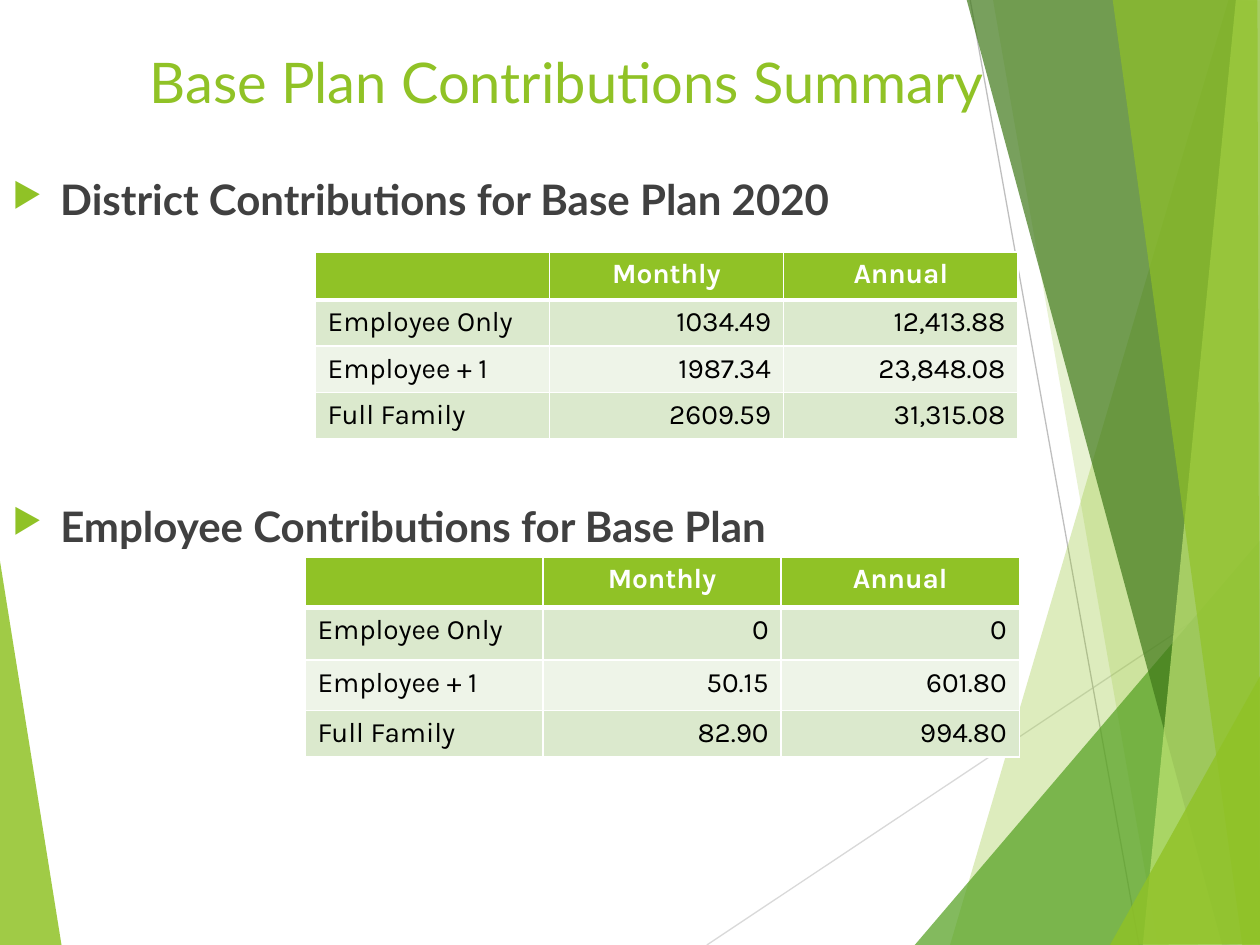
from dataclasses import dataclass

from lxml import etree
from pptx import Presentation
from pptx.dml.color import RGBColor
from pptx.enum.shapes import MSO_CONNECTOR
from pptx.enum.text import MSO_ANCHOR, MSO_AUTO_SIZE, PP_ALIGN
from pptx.oxml.ns import qn
from pptx.util import Inches, Pt

STRAIGHT = MSO_CONNECTOR.STRAIGHT
TOP = MSO_ANCHOR.TOP
NO_AUTOFIT = MSO_AUTO_SIZE.NONE
LEFT, CENTER, RIGHT = PP_ALIGN.LEFT, PP_ALIGN.CENTER, PP_ALIGN.RIGHT

GREEN, WHITE, BLACK, GRAY = "90C226", "FFFFFF", "000000", "404040"
BANDS = ("DBE9CD", "EEF4E8")
HEADER = ("", "Monthly", "Annual")


@dataclass
class Facet:
    color: str
    opacity: int
    points: list


@dataclass
class Ray:
    color: str
    start: tuple
    end: tuple


@dataclass
class Heading:
    text: str
    top: float
    width: float
    height: float


@dataclass
class Contributions:
    left: float
    top: float
    column_width: float
    row_heights: list
    rows: list


# Background parts, from back to front
BACKGROUND = [
    Facet(GREEN, 85, [(-0.01, 4.39), (0.49, 7.51), (-0.01, 7.5)]),
    Ray("D9D9D9", (5.61, 7.5), (10.01, 4.57)),
    Ray("BFBFBF", (7.7, 0), (9.04, 7.5)),
    Facet(GREEN, 30, [(9.75, 0), (7.54, 7.5), (10.02, 7.51), (10.01, 0.01)]),
    Facet(GREEN, 20, [(7.88, -0.01), (9.19, 7.5), (10.01, 7.5), (10.01, -0.01)]),
    Facet("54A021", 72, [(7.26, 7.5), (10, 4.29), (10.01, 7.5)]),
    Facet("3F7819", 70, [(7.67, -0.01), (9.7, 7.5), (10.01, 7.49), (10.01, -0.01)]),
    Facet("C0E474", 70, [(9.81, -0.01), (9.07, 7.5), (10.01, 7.5), (10, -0.01)]),
    Facet(GREEN, 65, [(8.83, -0.01), (9.86, 7.5), (10, 7.5), (9.98, -0.01)]),
    Facet(GREEN, 80, [(8.81, 7.5), (10.01, 5.35), (10.01, 7.49)]),
]

HEADINGS = [
    Heading("District Contributions for Base Plan 2020", 1.33, 7.83, 0.88),
    Heading("Employee Contributions for Base Plan", 3.92, 6.92, 0.7),
]

TABLES = [
    Contributions(2.5, 2, 1.86, [0.38, 0.36, 0.36, 0.36], [
        ("Employee Only", "1034.49", "12,413.88"),
        ("Employee + 1", "1987.34", "23,848.08"),
        ("Full Family", "2609.59", "31,315.08"),
    ]),
    Contributions(2.42, 4.42, 1.89, [0.4, 0.42, 0.4, 0.37], [
        ("Employee Only", "0", "0"),
        ("Employee + 1", "50.15", "601.80"),
        ("Full Family", "82.90", "994.80"),
    ]),
]


def rgb(color: str) -> RGBColor:
    return RGBColor.from_string(color)


def add_child(parent, tag: str, **attributes: str):
    return etree.SubElement(parent, qn(tag), attributes)


def set_font(para, name: str, size: int, color: str, bold: bool = False) -> None:
    font = para.font
    font.name, font.size, font.bold = name, Pt(size), bold
    font.color.rgb = rgb(color)


def draw_facet(slide, facet: Facet) -> None:
    points = [(Inches(x), Inches(y)) for x, y in facet.points]
    builder = slide.shapes.build_freeform(*points[0])
    builder.add_line_segments(points[1:], close=True)
    shape = builder.convert_to_shape()
    shape.shadow.inherit = False
    shape.line.fill.background()
    shape.fill.solid()
    shape.fill.fore_color.rgb = rgb(facet.color)
    color = shape.element.spPr.find(".//" + qn("a:srgbClr"))
    add_child(color, "a:alpha", val=str(facet.opacity * 1000))


def draw_ray(slide, ray: Ray) -> None:
    ends = [Inches(value) for value in (*ray.start, *ray.end)]
    line = slide.shapes.add_connector(STRAIGHT, *ends)
    line.line.color.rgb = rgb(ray.color)
    line.line.width = Pt(0.75)
    add_child(line.element.spPr, "a:effectLst")


def draw_title(slide, text: str) -> None:
    title = slide.shapes.title
    title.left, title.top = Inches(0), Inches(0.33)
    title.width, title.height = Inches(9), Inches(1)
    frame = title.text_frame
    frame.text = text
    frame.auto_size = NO_AUTOFIT
    frame.vertical_anchor = TOP
    para = frame.paragraphs[0]
    para.alignment = CENTER
    set_font(para, "Lato", 32, GREEN)
    # Bring the title in front of the background
    title.element.getparent().append(title.element)


def draw_heading(slide, heading: Heading) -> None:
    box = slide.shapes.add_textbox(
        Inches(0), Inches(heading.top), Inches(heading.width), Inches(heading.height))
    box.text_frame.word_wrap = True
    para = box.text_frame.paragraphs[0]
    para.text = heading.text
    para.space_before = Pt(10)
    properties = para._p.get_or_add_pPr()
    indent = Inches(0.38)
    properties.set("marL", str(indent))
    properties.set("indent", str(-indent))
    add_child(add_child(properties, "a:buClr"), "a:srgbClr", val=GREEN)
    add_child(properties, "a:buSzPct", val="80000")
    add_child(properties, "a:buChar", char="▶")
    set_font(para, "Lato", 24, GRAY, bold=True)


def set_borders(cell, bottom_width: float) -> None:
    properties = cell._tc.get_or_add_tcPr()
    widths = {"a:lnL": 1, "a:lnR": 1, "a:lnT": 1, "a:lnB": bottom_width}
    for position, (tag, width) in enumerate(widths.items()):
        line = etree.Element(qn(tag), w=str(Pt(width)))
        add_child(add_child(line, "a:solidFill"), "a:srgbClr", val=WHITE)
        properties.insert(position, line)


def draw_table(slide, data: Contributions) -> None:
    rows = [HEADER, *data.rows]
    table = slide.shapes.add_table(
        len(rows), len(HEADER), Inches(data.left), Inches(data.top),
        Inches(data.column_width * len(HEADER)), Inches(sum(data.row_heights))).table
    for column in table.columns:
        column.width = Inches(data.column_width)
    for r, (values, height) in enumerate(zip(rows, data.row_heights)):
        table.rows[r].height = Inches(height)
        is_header = r == 0
        for c, value in enumerate(values):
            cell = table.cell(r, c)
            cell.fill.solid()
            cell.fill.fore_color.rgb = rgb(GREEN if is_header else BANDS[(r - 1) % 2])
            set_borders(cell, 3 if is_header else 1)
            para = cell.text_frame.paragraphs[0]
            if value:
                para.text = value
            para.alignment = CENTER if is_header else RIGHT if c else LEFT
            set_font(para, "Karla", 16, WHITE if is_header else BLACK, is_header)


def main() -> None:
    deck = Presentation()
    deck.slide_width, deck.slide_height = Inches(10), Inches(7.5)
    slide = deck.slides.add_slide(deck.slide_layouts[5])

    for part in BACKGROUND:
        if isinstance(part, Facet):
            draw_facet(slide, part)
        else:
            draw_ray(slide, part)
    draw_title(slide, "Base Plan Contributions Summary")
    for heading in HEADINGS:
        draw_heading(slide, heading)
    for data in TABLES:
        draw_table(slide, data)
    deck.save("out.pptx")


if __name__ == "__main__":
    main()
